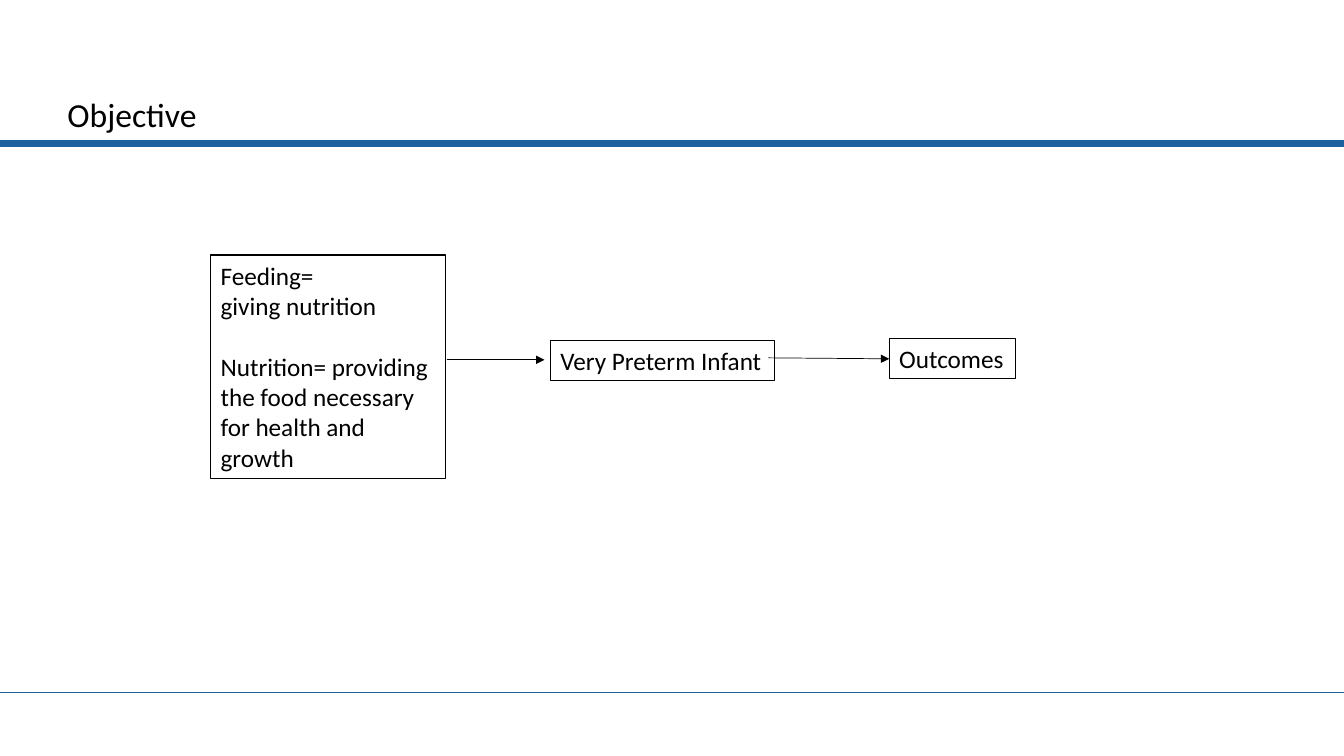
from dataclasses import dataclass

from lxml import etree
from pptx import Presentation
from pptx.dml.color import RGBColor
from pptx.enum.shapes import MSO_CONNECTOR, MSO_SHAPE
from pptx.enum.text import MSO_ANCHOR, PP_ALIGN
from pptx.oxml.ns import qn
from pptx.util import Inches, Pt

STRAIGHT = MSO_CONNECTOR.STRAIGHT
RECTANGLE = MSO_SHAPE.RECTANGLE
LEFT = PP_ALIGN.LEFT
TOP, BOTTOM = MSO_ANCHOR.TOP, MSO_ANCHOR.BOTTOM


@dataclass(frozen=True)
class Theme:
    font: str = "Calibri"
    ink: RGBColor = RGBColor(0x00, 0x00, 0x00)
    accent: RGBColor = RGBColor(0x1C, 0x61, 0x9E)
    title_size: int = 24
    body_size: int = 18
    paragraph_gap: int = 22
    box_line: float = 0.75
    arrow_line: float = 0.5


THEME = Theme()
WIDTH, HEIGHT = 13.33, 7.5

# Content: lengths are inches on the slide
TITLE = "Objective"
TITLE_AREA = (0.57, 0.4, 12.25, 0.99)
RULES = [(6.87, 1), (1.42, 5)]  # height on the slide, thickness
# Each box: area, wrapping, groups of lines
BOXES = [
    ((2.09, 2.53, 2.33, 2.22), True, [
        ["Feeding=", "giving nutrition"],
        ["Nutrition= providing", "the food necessary", "for health and growth"],
    ]),
    ((5.46, 3.38, 2.22, 0.4), False, [["Very Preterm Infant"]]),
    ((8.82, 3.36, 1.25, 0.4), False, [["Outcomes"]]),
]
ARROWS = [((4.43, 3.57), (5.4, 3.57)), ((7.62, 3.55), (8.82, 3.56))]


def style_text(paragraph, size):
    paragraph.alignment = LEFT
    for run in paragraph.runs:
        run.font.name = THEME.font
        run.font.size = Pt(size)
        run.font.color.rgb = THEME.ink


def add_line(slide, start, end, color, thickness, arrow=False):
    points = [Inches(value) for value in (*start, *end)]
    connector = slide.shapes.add_connector(STRAIGHT, *points)
    connector.line.color.rgb = color
    connector.line.width = Pt(thickness)
    if arrow:
        line = connector.line._get_or_add_ln()
        etree.SubElement(line, qn("a:tailEnd"), type="triangle")
    etree.SubElement(connector._element.spPr, qn("a:effectLst"))


def add_title(slide):
    shape = slide.shapes.add_textbox(*map(Inches, TITLE_AREA))
    frame = shape.text_frame
    frame.word_wrap = True
    frame.vertical_anchor = BOTTOM
    frame.text = TITLE
    frame.paragraphs[0].line_spacing = 0.9
    style_text(frame.paragraphs[0], THEME.title_size)


def add_box(slide, area, wrap, groups):
    shape = slide.shapes.add_shape(RECTANGLE, *map(Inches, area))
    shape.shadow.inherit = False
    shape.fill.background()
    shape.line.color.rgb = THEME.ink
    shape.line.width = Pt(THEME.box_line)
    frame = shape.text_frame
    frame.word_wrap = wrap
    frame.vertical_anchor = TOP
    frame.text = "\n".join(line for group in groups for line in group)
    for paragraph in frame.paragraphs:
        style_text(paragraph, THEME.body_size)
    # Open a one-line gap before every group after the first
    first_line = 0
    for group in groups[:-1]:
        first_line += len(group)
        frame.paragraphs[first_line].space_before = Pt(THEME.paragraph_gap)


def main():
    presentation = Presentation()
    presentation.slide_width = Inches(WIDTH)
    presentation.slide_height = Inches(HEIGHT)
    slide = presentation.slides.add_slide(presentation.slide_layouts[6])

    # Rules and title
    for y, thickness in RULES:
        add_line(slide, (0, y), (WIDTH, y), THEME.accent, thickness)
    add_title(slide)

    # Flow from feeding to outcomes
    for area, wrap, groups in BOXES:
        add_box(slide, area, wrap, groups)
    for start, end in ARROWS:
        add_line(slide, start, end, THEME.ink, THEME.arrow_line, arrow=True)

    presentation.save("out.pptx")


if __name__ == "__main__":
    main()
